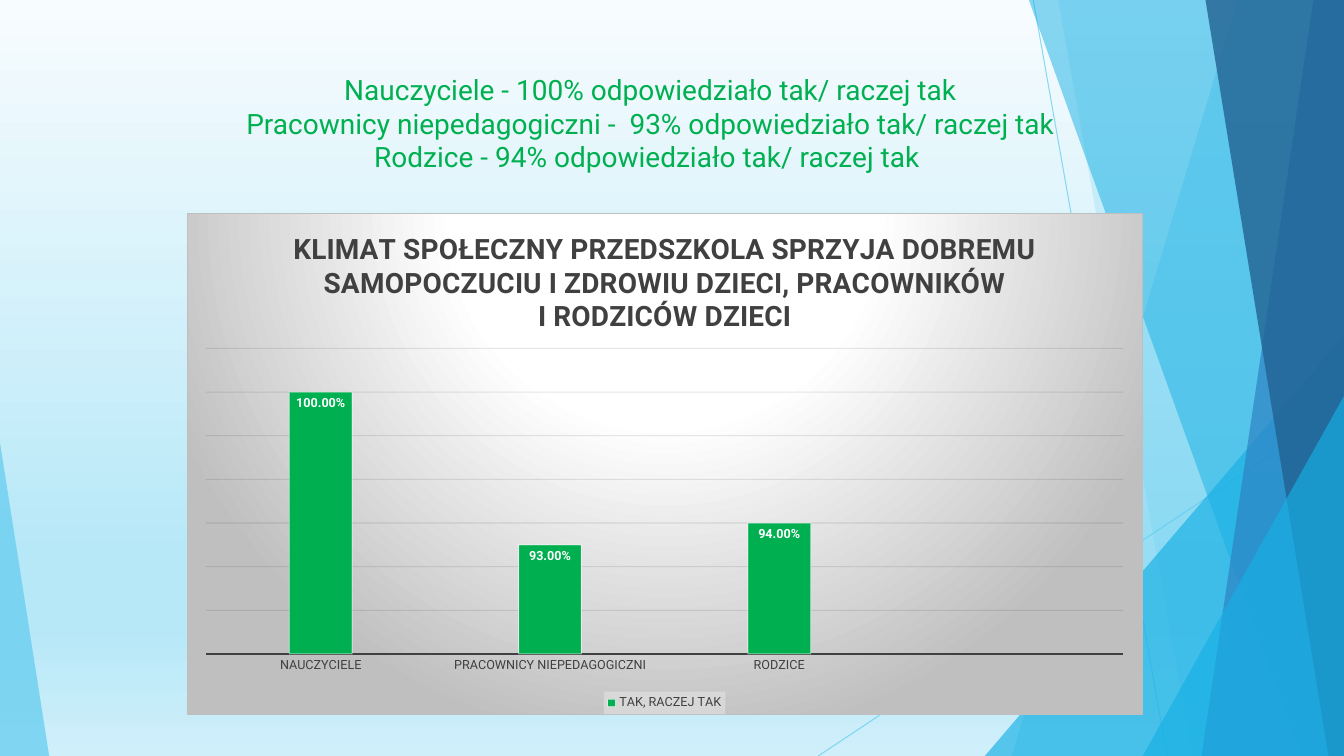
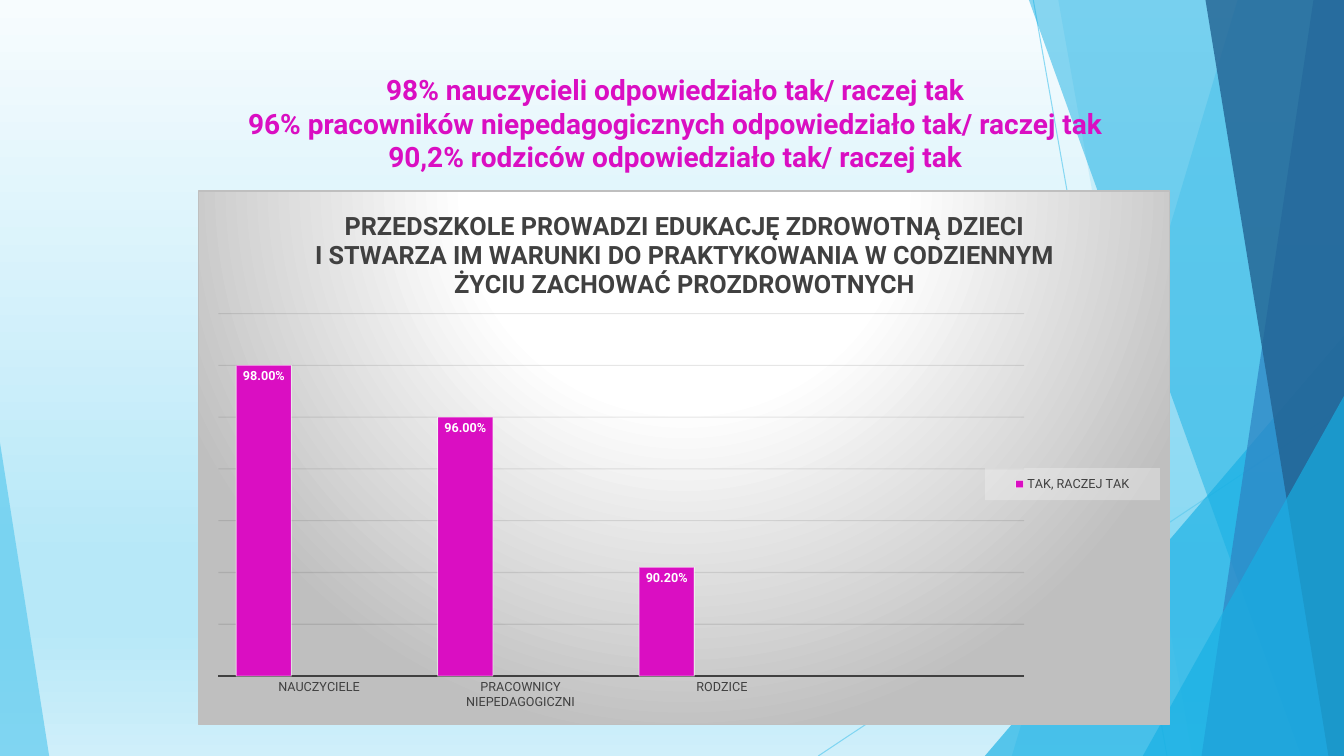
from pptx import Presentation
from pptx.chart.data import CategoryChartData
from pptx.dml.color import RGBColor
from pptx.enum.chart import XL_CHART_TYPE, XL_LABEL_POSITION, XL_LEGEND_POSITION, XL_TICK_MARK
from pptx.enum.shapes import MSO_CONNECTOR, MSO_SHAPE, PP_PLACEHOLDER
from pptx.enum.text import MSO_ANCHOR, MSO_AUTO_SIZE, PP_ALIGN
from pptx.oxml import parse_xml
from pptx.oxml.ns import nsdecls
from pptx.util import Cm, Pt

FONT = "Roboto"
WIDTH, HEIGHT = 33.87, 19.05
COLORS = {
    "sky": "5FCBEF",
    "cyan": "17B0E4",
    "blue": "2E83C3",
    "navy": "226292",
    "mint": "42D0A2",
    "green": "00B050",
    "magenta": "DA0EC2",
    "white": "FFFFFF",
    "silver": "F2F2F2",
    "gray": "BFBFBF",
    "dark": "404040",
    "black": "0D0D0D",
    "bg_top": "F7FCFE",
    "bg_mid": "B7E8F8",
    "bg_end": "CFEFFA",
}
CATEGORIES = ["NAUCZYCIELE", "PRACOWNICY NIEPEDAGOGICZNI", "RODZICE", ""]
ANSWER = "TAK, RACZEJ TAK"
EMPTY = [None] * 4


def rgb(name):
    return RGBColor.from_string(COLORS[name])


def xml(tag, body):
    return parse_xml(f"<{tag} {nsdecls('a', 'c')}>{body}</{tag}>")


def gradient(stops, direction):
    gs = "".join(
        f'<a:gs pos="{pos * 1000}"><a:srgbClr val="{COLORS[name]}"/></a:gs>'
        for pos, name in stops
    )
    return f"<a:gsLst>{gs}</a:gsLst>{direction}"


def fade(element, path, alpha):
    for color in element.xpath(path):
        color.append(xml("a:alpha", ""))
        color[-1].set("val", str(alpha * 1000))


def format_font(font, size, color="dark", bold=False):
    font.name = FONT
    font.size = Pt(size)
    font.bold = bold
    font.color.rgb = rgb(color)


def write(tf, text, align=PP_ALIGN.CENTER, **style):
    tf.text = text
    for p in tf.paragraphs:
        p.alignment = align
        for r in p.runs:
            format_font(r.font, **style)


def set_line(line, color, width):
    line.color.rgb = rgb(color)
    line.width = Pt(width)


def add_line(s, x1, y1, x2, y2):
    line = s.shapes.add_connector(
        MSO_CONNECTOR.STRAIGHT, Cm(x1), Cm(y1), Cm(x2), Cm(y2)
    )
    set_line(line.line, "sky", 0.75)
    line.element.spPr.append(xml("a:effectLst", ""))
    fade(line.element, ".//a:ln//a:srgbClr", 70)


def paint(sp, color, alpha):
    sp.shadow.inherit = False
    sp.fill.solid()
    sp.fill.fore_color.rgb = rgb(color)
    sp.line.fill.background()
    fade(sp.element, "./p:spPr/a:solidFill/a:srgbClr", alpha)


def add_band(s, top_x, bottom_x, color, alpha):
    builder = s.shapes.build_freeform(Cm(top_x), 0)
    corners = [(WIDTH, 0), (WIDTH, HEIGHT), (bottom_x, HEIGHT)]
    builder.add_line_segments([(Cm(x), Cm(y)) for x, y in corners])
    paint(builder.convert_to_shape(), color, alpha)


def add_triangle(s, x, y, w, apex, color, alpha):
    sp = s.shapes.add_shape(
        MSO_SHAPE.ISOSCELES_TRIANGLE, Cm(x), Cm(y), Cm(w), Cm(HEIGHT - y)
    )
    sp.adjustments[0] = apex
    paint(sp, color, alpha)


def set_background(layout):
    layout.background.fill.solid()
    solid = layout.element.xpath(".//p:bgPr/a:solidFill")[0]
    stops = [(0, "bg_top"), (74, "bg_mid"), (83, "bg_mid"), (100, "bg_end")]
    body = gradient(stops, '<a:lin ang="5400000" scaled="0"/>')
    solid.getparent().replace(solid, xml("a:gradFill", body))


def decorate(layout, s):
    for ph in list(layout.placeholders):
        if ph.placeholder_format.type != PP_PLACEHOLDER.TITLE:
            layout.shapes.element.remove(ph.element)
    set_background(layout)
    add_line(s, 26.04, 0, 29.41, HEIGHT)
    add_line(s, WIDTH, 10.24, 20.62, HEIGHT)
    add_band(s, 31.19, 25.5, "sky", 36)
    add_band(s, 26.67, 30.05, "sky", 20)
    add_triangle(s, 24.82, 8.46, 9.05, 1, "cyan", 66)
    add_band(s, 25.93, 32.79, "cyan", 50)
    add_band(s, 33.1, 30.28, "blue", 70)
    add_band(s, 30.38, 33.48, "navy", 80)
    add_triangle(s, 28.8, 9.98, 5.07, 1, "cyan", 66)
    add_triangle(s, 0, 11.15, 1.24, 0, "sky", 70)
    for sp in list(s.shapes):
        if not sp.is_placeholder:
            layout.shapes.element.append(sp.element)


def set_title(s, text, width, height, color, bold=False):
    title = s.shapes.title
    title.left, title.top = Cm(1.88), Cm(1.7)
    title.width, title.height = Cm(width), Cm(height)
    tf = title.text_frame
    tf.word_wrap = True
    tf.auto_size = MSO_AUTO_SIZE.NONE
    tf.vertical_anchor = MSO_ANCHOR.TOP
    write(tf, text, size=20, color=color, bold=bold)


def manual_layout(box, inner=False):
    target = '<c:layoutTarget val="inner"/>' if inner else ""
    modes = '<c:xMode val="edge"/><c:yMode val="edge"/>'
    sizes = "".join(f'<c:{key} val="{val}"/>' for key, val in zip("xywh", box))
    return xml("c:layout", f"<c:manualLayout>{target}{modes}{sizes}</c:manualLayout>")


def style_frame(chart, plot_box):
    direction = (
        '<a:path path="circle">'
        '<a:fillToRect l="50000" t="-80000" r="50000" b="180000"/></a:path>'
    )
    fill = gradient([(0, "white"), (39, "white"), (100, "gray")], direction)
    border = f'<a:solidFill><a:srgbClr val="{COLORS["gray"]}"/></a:solidFill>'
    chart.element.xpath("c:chart")[0].addnext(
        xml("c:spPr", f'<a:gradFill>{fill}</a:gradFill><a:ln w="9525">{border}</a:ln>')
    )
    area = chart.element.xpath("c:chart/c:plotArea")[0]
    for old in area.xpath("c:layout"):
        area.remove(old)
    area.insert(0, manual_layout(plot_box, inner=True))


def style_axes(chart, low, high):
    cat = chart.category_axis
    cat.major_tick_mark = XL_TICK_MARK.NONE
    format_font(cat.tick_labels.font, 9)
    set_line(cat.format.line, "dark", 1.5)
    val = chart.value_axis
    val.visible = False
    val.minimum_scale, val.maximum_scale, val.major_unit = low, high, 0.02
    val.has_major_gridlines = True
    set_line(val.major_gridlines.format.line, "black", 0.75)
    fade(chart.element, ".//c:majorGridlines//a:srgbClr", 10)


def style_series(chart, colors):
    plot = chart.plots[0]
    plot.gap_width, plot.overlap, plot.vary_by_categories = 65, 0, False
    for ser, color in zip(plot.series, colors):
        ser.invert_if_negative = False
        ser.format.fill.solid()
        ser.format.fill.fore_color.rgb = rgb(color)
        set_line(ser.format.line, "white", 0.75)
        labels = ser.data_labels
        labels.show_value = True
        labels.position = XL_LABEL_POSITION.INSIDE_END
        labels.number_format = "0.00%"
        labels.number_format_is_linked = False
        format_font(labels.font, 9, "white", True)
    fade(chart.element, ".//c:ser/c:spPr/a:ln//a:srgbClr", 50)


def style_legend(chart, position, hidden, box):
    chart.has_legend = True
    legend = chart.legend
    legend.position = position
    legend.include_in_layout = False
    format_font(legend.font, 9)
    element = chart.element.xpath(".//c:legend")[0]
    for old in element.xpath("c:layout"):
        element.remove(old)
    overlay = element.xpath("c:overlay")[0]
    for idx in hidden:
        overlay.addprevious(
            xml("c:legendEntry", f'<c:idx val="{idx}"/><c:delete val="1"/>')
        )
    if box:
        overlay.addprevious(manual_layout(box))
    color = f'<a:srgbClr val="{COLORS["silver"]}"><a:alpha val="39000"/></a:srgbClr>'
    overlay.addnext(xml("c:spPr", f"<a:solidFill>{color}</a:solidFill>"))


def add_columns(s, place, title, title_size, series, scale, plot_box,
                legend_position, legend_box=None):
    data = CategoryChartData(number_format="0.00%")
    data.categories = CATEGORIES
    for name, values, _ in series:
        data.add_series(name, values)
    chart = s.shapes.add_chart(
        XL_CHART_TYPE.COLUMN_CLUSTERED, *[Cm(v) for v in place], data
    ).chart
    format_font(chart.font, 10)
    chart.has_title = True
    write(chart.chart_title.text_frame, title, size=title_size, bold=True)
    chart.chart_title.include_in_layout = False
    style_frame(chart, plot_box)
    style_axes(chart, *scale)
    style_series(chart, [color for _, _, color in series])
    hidden = [i for i, (name, _, _) in enumerate(series) if name != ANSWER]
    style_legend(chart, legend_position, hidden, legend_box)


def add_climate(s):
    set_title(
        s,
        "Nauczyciele - 100% odpowiedziało tak/ raczej tak\v"
        "Pracownicy niepedagogiczni -  93% odpowiedziało tak/ raczej tak\v"
        "Rodzice - 94% odpowiedziało tak/ raczej tak ",
        29.03, 3.66, "green",
    )
    add_columns(
        s, (4.7, 5.36, 24.1, 12.65),
        "KLIMAT SPOŁECZNY PRZEDSZKOLA SPRZYJA DOBREMU\n"
        "SAMOPOCZUCIU I ZDROWIU DZIECI, PRACOWNIKÓW\n"
        "I RODZICÓW DZIECI",
        20,
        [
            ("Series 1", EMPTY, "sky"),
            (ANSWER, [1, 0.93, 0.94, None], "green"),
            ("Series 3", EMPTY, "mint"),
        ],
        (0.88, 1.02), (0.02, 0.27, 0.96, 0.61), XL_LEGEND_POSITION.BOTTOM,
    )


def add_education(s):
    set_title(
        s,
        "98% nauczycieli odpowiedziało tak/ raczej tak\v"
        "96% pracowników niepedagogicznych odpowiedziało tak/ raczej tak\v"
        "90,2% rodziców odpowiedziało tak/ raczej tak",
        30.28, 2.31, "magenta", bold=True,
    )
    add_columns(
        s, (5, 4.8, 24.49, 13.46),
        "PRZEDSZKOLE PROWADZI EDUKACJĘ ZDROWOTNĄ DZIECI\n"
        "I STWARZA IM WARUNKI DO PRAKTYKOWANIA W CODZIENNYM\n"
        "ŻYCIU ZACHOWAĆ PROZDROWOTNYCH",
        18,
        [
            (ANSWER, [0.98, 0.96, 0.902, None], "magenta"),
            ("Series 2", EMPTY, "blue"),
            ("Series 3", EMPTY, "mint"),
        ],
        (0.86, 1), (0.02, 0.23, 0.83, 0.68), XL_LEGEND_POSITION.RIGHT,
        (0.81, 0.52, 0.18, 0.06),
    )


def main():
    prs = Presentation()
    prs.slide_width, prs.slide_height = Cm(WIDTH), Cm(HEIGHT)
    layout = prs.slide_layouts[5]
    climate, education = [prs.slides.add_slide(layout) for _ in range(2)]
    decorate(layout, climate)
    add_climate(climate)
    add_education(education)
    prs.save("out.pptx")


if __name__ == "__main__":
    main()
